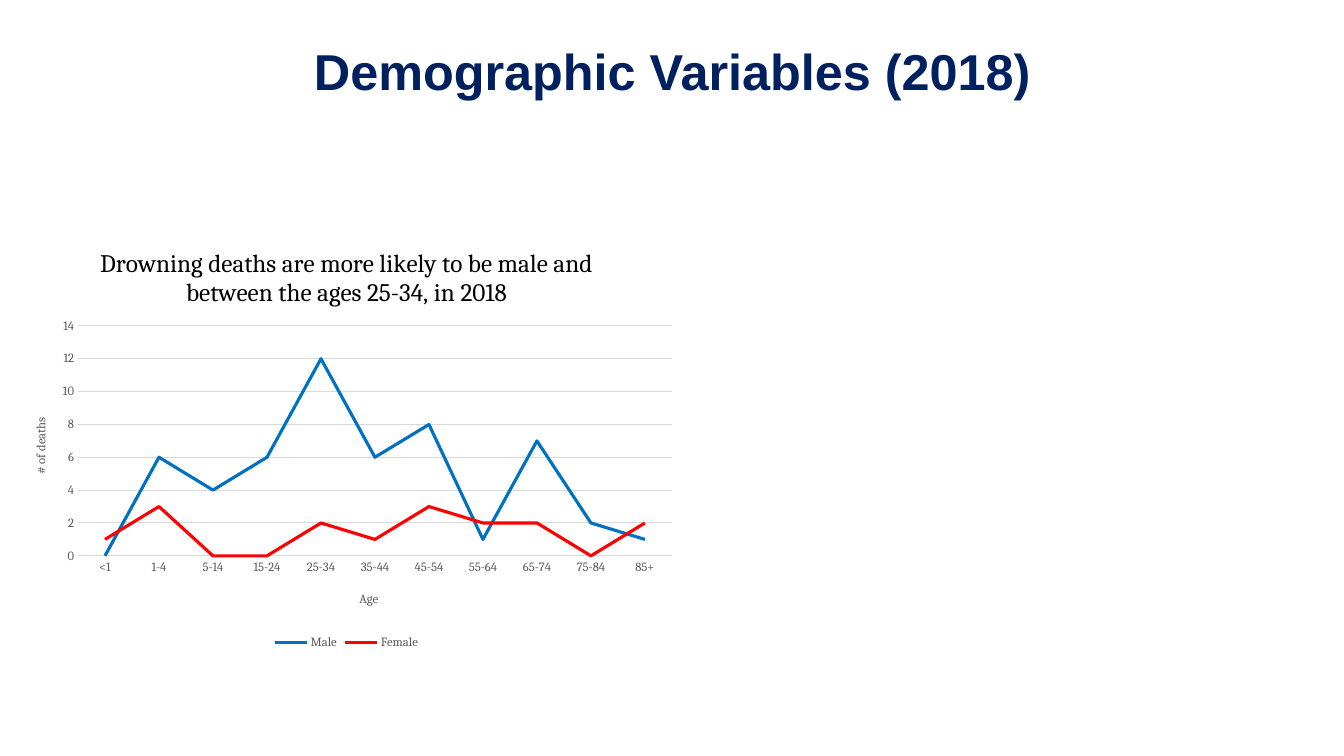
"""Build the slide on drowning deaths by age and sex in 2018."""
from lxml.etree import SubElement
from pptx import Presentation
from pptx.chart.data import CategoryChartData
from pptx.dml.color import RGBColor
from pptx.enum.chart import XL_CHART_TYPE, XL_LEGEND_POSITION, XL_TICK_MARK
from pptx.enum.text import MSO_ANCHOR, PP_ALIGN
from pptx.oxml.ns import qn
from pptx.util import Pt

HEADING = "Demographic Variables (2018)"
FINDING = "Drowning deaths are more likely to be male and between the ages 25-34, in 2018"
AGE_LABEL = "Age"
DEATHS_LABEL = "# of deaths"
AGES = ["<1", "1-4", "5-14", "15-24", "25-34", "35-44", "45-54", "55-64", "65-74", "75-84", "85+"]
DEATHS = {
    "Male": [0, 6, 4, 6, 12, 6, 8, 1, 7, 2, 1],
    "Female": [1, 3, 0, 0, 2, 1, 3, 2, 2, 0, 2],
}
COLORS = {
    "heading": "002060", "finding": "000000", "label": "595959",
    "grid": "D9D9D9", "Male": "0070C0", "Female": "FF0000",
}
FORMATS = {
    "heading": {"name": "Arial", "size": Pt(36), "bold": True},
    "finding": {"name": "Cambria", "size": Pt(18), "bold": False},
    "label": {"name": "Cambria", "size": Pt(9), "bold": False},
}
EMU_PER_PX = 914400 / 100.8
SLIDE_SIZE = (1344, 756)
HEADING_BOX = (7, 21, 1331, 98)
CHART_BOX = (7, 228, 679, 426)
PLOT_BOX = (78, 326, 594, 230)
AGE_LABEL_AT = (357, 588)
DEATHS_LABEL_AT = (30, 415)


def emu(lengths):
    return [round(length * EMU_PER_PX) for length in lengths]


def style(font, role):
    for attribute, value in FORMATS[role].items():
        setattr(font, attribute, value)
    font.color.rgb = RGBColor.from_string(COLORS[role])


def draw_line(line, role, width):
    line.color.rgb = RGBColor.from_string(COLORS[role])
    line.width = Pt(width)


def place(parent, box, inner=False):
    """Fix a chart part at a slide position given in px."""
    left, top, width, height = CHART_BOX
    shares = [(box[0] - left) / width, (box[1] - top) / height]
    if inner:
        shares += [box[2] / width, box[3] / height]
    for old in parent.findall(qn("c:layout")):
        parent.remove(old)
    layout = SubElement(parent, qn("c:layout"))
    parent.insert(0 if inner else 1, layout)
    manual = SubElement(layout, qn("c:manualLayout"))
    settings = [("layoutTarget", "inner")] if inner else []
    settings += [("xMode", "edge"), ("yMode", "edge")]
    settings += [(key, f"{share:.4f}") for key, share in zip("xywh", shares)]
    for key, value in settings:
        SubElement(manual, qn(f"c:{key}")).set("val", value)


def write_label(title, text, role):
    title.text_frame.text = text
    style(title.text_frame.paragraphs[0].runs[0].font, role)


def add_heading(slide):
    heading = slide.shapes.title
    heading.left, heading.top, heading.width, heading.height = emu(HEADING_BOX)
    heading.text_frame.text = HEADING
    heading.text_frame.vertical_anchor = MSO_ANCHOR.MIDDLE
    paragraph = heading.text_frame.paragraphs[0]
    paragraph.alignment = PP_ALIGN.CENTER
    style(paragraph.runs[0].font, "heading")


def add_deaths_chart(slide):
    death_counts = CategoryChartData()
    death_counts.categories = AGES
    for sex, counts in DEATHS.items():
        death_counts.add_series(sex, counts)
    chart = slide.shapes.add_chart(XL_CHART_TYPE.LINE, *emu(CHART_BOX), death_counts).chart
    style(chart.font, "label")
    chart.has_title = True
    write_label(chart.chart_title, FINDING, "finding")
    chart.has_legend = True
    chart.legend.position = XL_LEGEND_POSITION.BOTTOM
    chart.legend.include_in_layout = False
    style(chart.legend.font, "label")

    plot = chart.plots[0]
    plot.vary_by_categories = False
    for series in plot.series:
        series.smooth = False
        draw_line(series.format.line, series.name, 2.25)

    axes = (
        (chart.category_axis, AGE_LABEL, AGE_LABEL_AT),
        (chart.value_axis, DEATHS_LABEL, DEATHS_LABEL_AT),
    )
    for axis, text, position in axes:
        axis.major_tick_mark = axis.minor_tick_mark = XL_TICK_MARK.NONE
        style(axis.tick_labels.font, "label")
        write_label(axis.axis_title, text, "label")
        place(axis.axis_title._element, position)
    draw_line(chart.category_axis.format.line, "grid", 0.75)
    deaths_axis = chart.value_axis
    deaths_axis.format.line.fill.background()
    deaths_axis.minimum_scale, deaths_axis.maximum_scale = 0, 14
    deaths_axis.major_unit = 2
    draw_line(deaths_axis.major_gridlines.format.line, "grid", 0.75)
    place(chart._chartSpace.chart.plotArea, PLOT_BOX, inner=True)


def main():
    deck = Presentation()
    deck.slide_width, deck.slide_height = emu(SLIDE_SIZE)
    slide = deck.slides.add_slide(deck.slide_layouts[5])
    add_heading(slide)
    add_deaths_chart(slide)
    deck.save("out.pptx")


if __name__ == "__main__":
    main()
